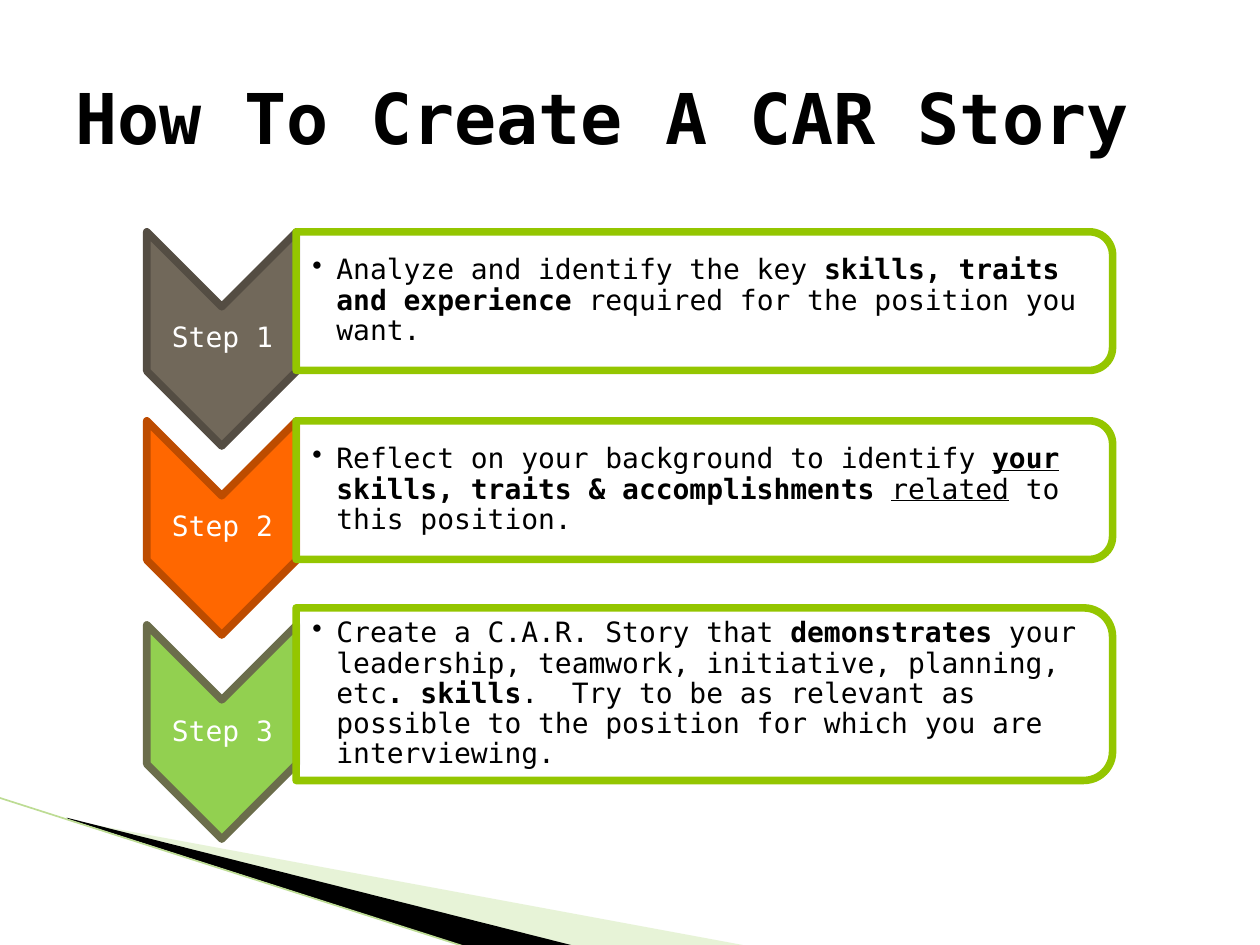
"""Build the slide that explains how to create a CAR story in three steps."""
from lxml import etree
from pptx import Presentation
from pptx.dml.color import RGBColor
from pptx.enum.shapes import MSO_CONNECTOR, MSO_SHAPE
from pptx.enum.text import MSO_ANCHOR, PP_ALIGN
from pptx.oxml.ns import qn
from pptx.util import Inches, Pt

FONT = "DejaVu Sans Mono"
STEPS = [
    ("Step 1", 2.39, 1.1, "71685A", "544D43", [
        ("Analyze and identify the key ", ""),
        ("skills, traits and experience ", "b"),
        ("required for the position you want.", "")]),
    ("Step 2", 3.89, 1.1, "FF6700", "BD4C00", [
        ("Reflect on your background to identify ", ""),
        ("your", "bu"),
        (" skills, traits & accomplishments ", "b"),
        ("related", "u"),
        (" to this position.", "")]),
    ("Step 3", 5.51, 1.37, "92D050", "6B6D4B", [
        ("Create a C.A.R. Story that ", ""),
        ("demonstrates", "b"),
        (" your leadership, teamwork, initiative, planning, etc", ""),
        (". skills", "b"),
        (".  Try to be as relevant as possible to the position "
         "for which you are interviewing.", "")]),
]


def color(value):
    return RGBColor.from_string(value)


class StorySlide:
    """Holds the style and the slide, with a method for each kind of element."""

    def __init__(self, slide, font):
        self.slide = slide
        self.shapes = slide.shapes
        self.font = font

    def style_font(self, paragraph, size, value):
        paragraph.font.name = self.font
        paragraph.font.size = Pt(size)
        paragraph.font.color.rgb = color(value)

    def fill(self, shape, value, opacity=100):
        shape.shadow.inherit = False
        shape.fill.solid()
        shape.fill.fore_color.rgb = color(value)
        if opacity < 100:
            tint = shape.fill._xPr.find(qn("a:solidFill"))[0]
            etree.SubElement(tint, qn("a:alpha"), val=str(opacity * 1000))

    def title(self, text):
        title = self.shapes.title
        title.left, title.top = Inches(0.5), Inches(0.3)
        title.width, title.height = Inches(9), Inches(1.25)
        title.text_frame.text = text
        title.text_frame.vertical_anchor = MSO_ANCHOR.MIDDLE
        paragraph = title.text_frame.paragraphs[0]
        paragraph.alignment = PP_ALIGN.LEFT
        self.style_font(paragraph, 40, "000000")
        paragraph.font.bold = True

    def wedge(self, points, value, opacity=100):
        corners = [(Inches(x), Inches(y)) for x, y in points]
        builder = self.shapes.build_freeform(*corners[0], scale=1.0)
        builder.add_line_segments(corners[1:])
        shape = builder.convert_to_shape()
        self.fill(shape, value, opacity)
        shape.line.fill.background()

    def line(self, start, end, value, width):
        connector = self.shapes.add_connector(
            MSO_CONNECTOR.STRAIGHT, *map(Inches, start + end))
        connector.line.color.rgb = color(value)
        connector.line.width = Pt(width)
        etree.SubElement(connector._element.spPr, qn("a:effectLst"))

    def turned_shape(self, kind, center, size, fill, line, opacity=100):
        (x, y), (width, height) = center, size
        shape = self.shapes.add_shape(
            kind, Inches(x - width / 2), Inches(y - height / 2),
            Inches(width), Inches(height))
        shape.rotation = 90
        self.fill(shape, fill, opacity)
        shape.line.color.rgb = color(line)
        shape.line.width = Pt(4.33)

    def text(self, left, center_y, width, height, runs, value, bullet=False):
        box = self.shapes.add_textbox(
            Inches(left), Inches(center_y - height / 2),
            Inches(width), Inches(height))
        frame = box.text_frame
        frame.word_wrap = True
        frame.vertical_anchor = MSO_ANCHOR.MIDDLE
        frame.margin_left = Inches(0.12 if bullet else 0.01)
        frame.margin_right = frame.margin_top = frame.margin_bottom = Inches(0.01)
        paragraph = frame.paragraphs[0]
        paragraph.line_spacing = 0.9
        if bullet:
            paragraph.level = 1
            properties = paragraph._p.get_or_add_pPr()
            properties.set("marL", str(Inches(0.19)))
            properties.set("indent", str(Inches(-0.19)))
            etree.SubElement(properties, qn("a:buChar"), char="•")
        else:
            paragraph.alignment = PP_ALIGN.CENTER
        self.style_font(paragraph, 16, value)
        for words, marks in runs:
            run = paragraph.add_run()
            run.text = words
            if "b" in marks:
                run.font.bold = True
            if "u" in marks:
                run.font.underline = True

    def step(self, label, center_y, height, fill, line, runs):
        chevron_y = center_y + 0.3
        self.turned_shape(MSO_SHAPE.CHEVRON, (1.76, chevron_y),
                          (1.7, 1.19), fill, line)
        self.text(1.17, chevron_y, 1.19, 0.51, [(label, "")], "FFFFFF")
        self.turned_shape(MSO_SHAPE.ROUND_2_SAME_RECTANGLE, (5.59, center_y),
                          (height, 6.48), "FFFFFF", "94C600", 90)
        self.text(2.36, center_y, 6.42, height * 0.9, runs, "000000", bullet=True)


def main():
    presentation = Presentation()
    presentation.slide_width, presentation.slide_height = Inches(10), Inches(7.5)
    layout = presentation.slide_layouts[5]
    story = StorySlide(presentation.slides.add_slide(layout), FONT)
    story.wedge([(0.55, 6.51), (5.95, 7.51), (4.56, 7.51), (0.55, 6.5)], "C3E19D", 40)
    story.wedge([(0.53, 6.49), (4.57, 7.51), (3.72, 7.52), (0.54, 6.5)], "000000")
    story.line((-0.01, 6.33), (3.71, 7.52), "BDDC94", 0.95)
    for step in STEPS:
        story.step(*step)
    story.title("How To Create A CAR Story")
    presentation.save("out.pptx")


if __name__ == "__main__":
    main()
